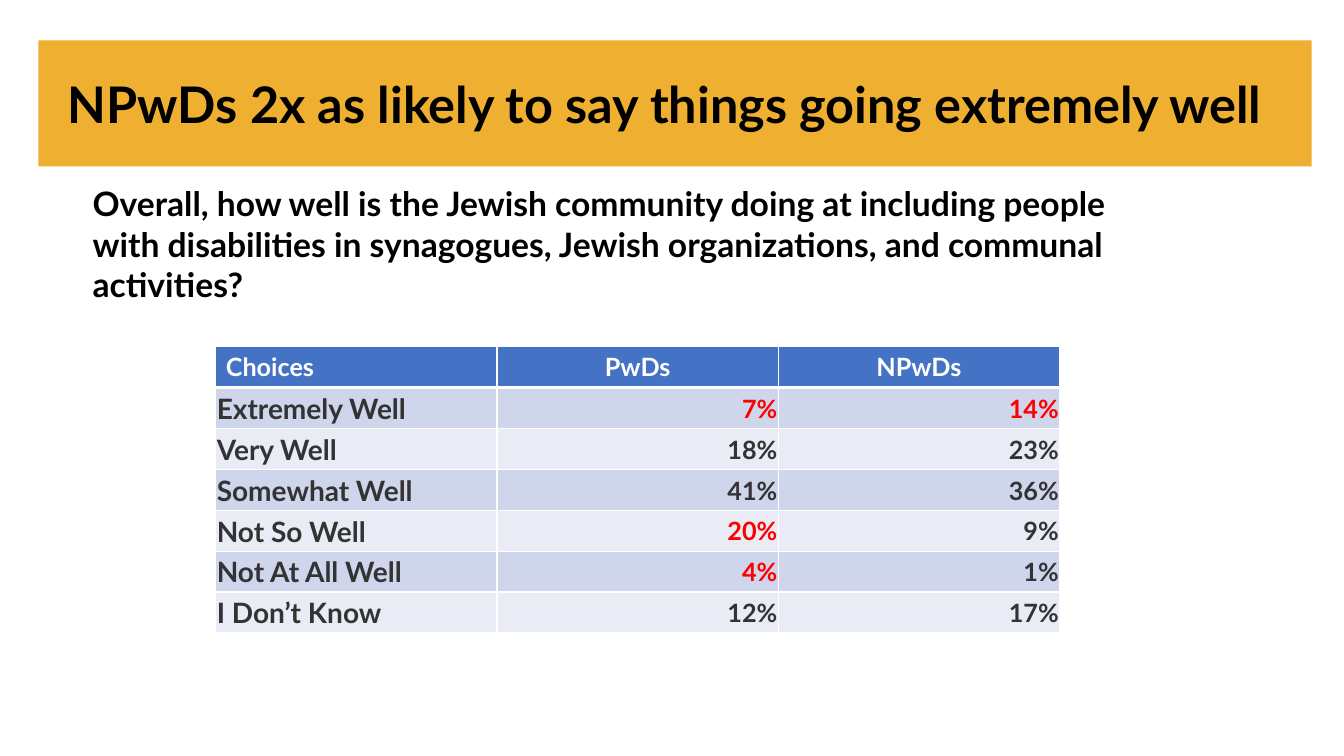
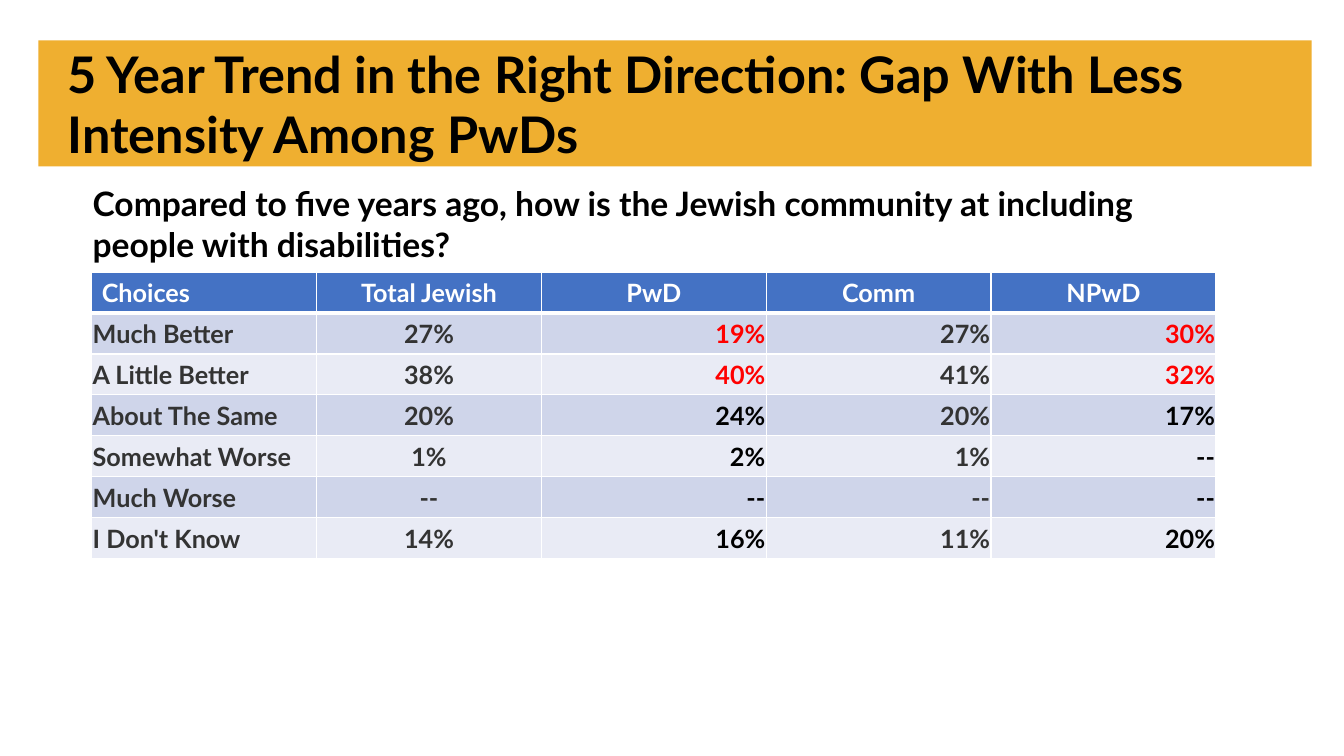
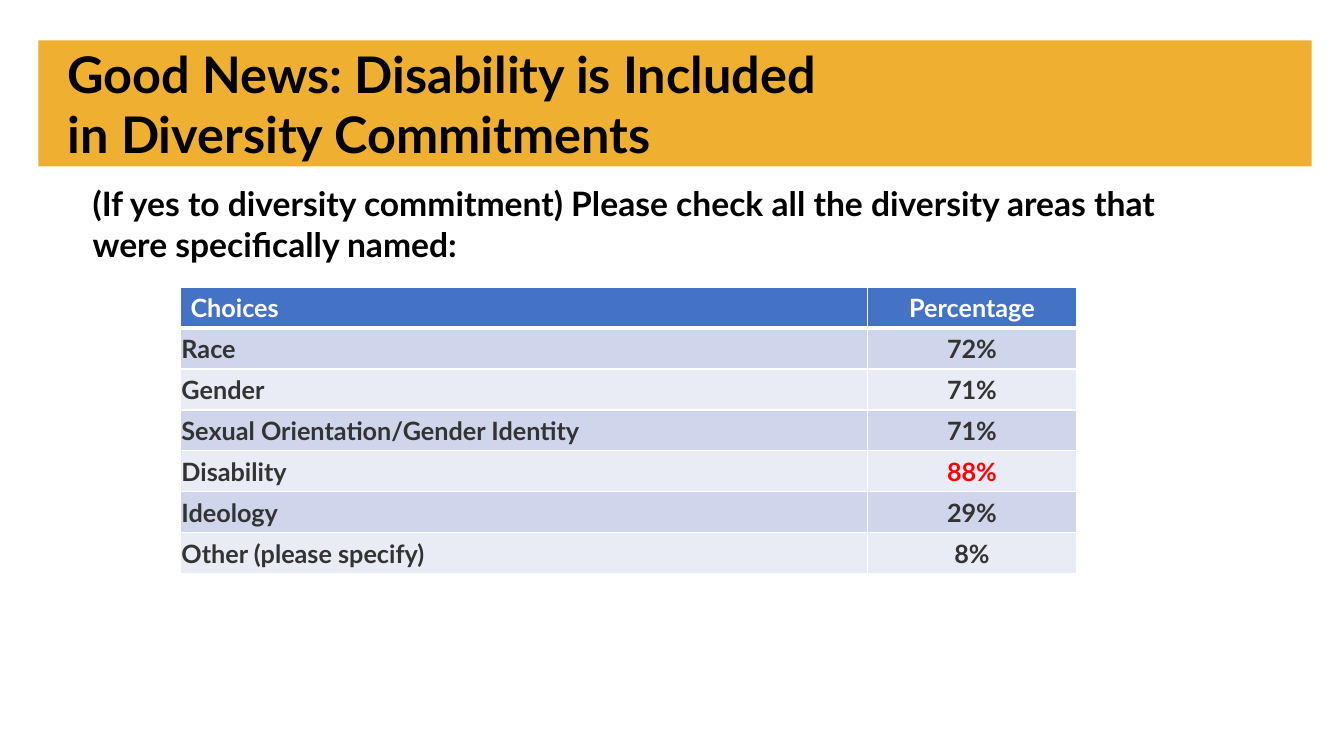
from pptx import Presentation
from pptx.dml.color import RGBColor
from pptx.enum.shapes import MSO_SHAPE
from pptx.enum.text import MSO_ANCHOR, MSO_AUTO_SIZE, PP_ALIGN
from pptx.oxml import parse_xml
from pptx.oxml.ns import nsdecls
from pptx.util import Inches, Pt

LEFT, CENTER, RIGHT = PP_ALIGN.LEFT, PP_ALIGN.CENTER, PP_ALIGN.RIGHT


def color(hex_code):
    """Turn a hex string into a colour."""
    return RGBColor.from_string(hex_code)


class SurveyDeck:
    """Holds the survey style and the slide being built."""

    FONT = "Lato"
    BAND, HEADER, STRIPES = "EFAF30", "4472C4", ("CFD5EA", "E9EBF5")
    WHITE, BLACK, GRAY, RED = "FFFFFF", "000000", "333333", "FF0000"
    THIN, THICK = 1, 3
    BAND_TOP, BAND_HEIGHT = Inches(0.4), Inches(1.25)

    def __init__(self):
        """Start a widescreen deck on the title-only layout."""
        self.deck = Presentation()
        self.deck.slide_width, self.deck.slide_height = Inches(13.33), Inches(7.5)
        self.layout = self.deck.slide_layouts[5]
        for footer in list(self.layout.placeholders)[1:]:
            self.layout.shapes.element.remove(footer.element)
        self.slide = None

    def add_slide(self, title, title_width, question, question_height):
        """Open a slide with its title and survey question."""
        self.slide = self.deck.slides.add_slide(self.layout)
        if len(self.deck.slides) == 1:
            self.add_layout_band()
        self.add_title(title, title_width)
        self.add_question(question, question_height)

    def add_layout_band(self):
        """Draw the title band and hand it to the shared layout."""
        band = self.slide.shapes.add_shape(
            MSO_SHAPE.RECTANGLE, Inches(0.38), self.BAND_TOP, Inches(12.63), self.BAND_HEIGHT)
        band.shadow.inherit = False
        band.fill.solid()
        band.fill.fore_color.rgb = color(self.BAND)
        band.line.fill.background()
        self.layout.shapes.element.insert(2, band.element)

    def set_text(self, frame, text, size, ink, align=LEFT):
        """Put bold text into a frame."""
        frame.text = text
        for paragraph in frame.paragraphs:
            paragraph.alignment = align
            for run in paragraph.runs:
                run.font.name = self.FONT
                run.font.size = Pt(size)
                run.font.bold = True
                run.font.color.rgb = color(ink)

    def add_title(self, text, width):
        """Place the title over the band."""
        title = self.slide.shapes.title
        title.left, title.top = Inches(0.57), self.BAND_TOP
        title.width, title.height = Inches(width), self.BAND_HEIGHT
        title.text_frame.auto_size = MSO_AUTO_SIZE.NONE
        title.text_frame.vertical_anchor = MSO_ANCHOR.MIDDLE
        self.set_text(title.text_frame, text, 36, self.BLACK)

    def add_question(self, text, height):
        """Place the survey question under the band."""
        question = self.slide.shapes.add_textbox(
            Inches(0.82), Inches(1.77), Inches(10.84), Inches(height))
        question.text_frame.word_wrap = True
        question.text_frame.auto_size = MSO_AUTO_SIZE.SHAPE_TO_FIT_TEXT
        self.set_text(question.text_frame, text, 24, self.BLACK)

    def style_cell(self, cell, fill, top, bottom):
        """Fill a cell and rule its four sides in white."""
        cell.vertical_anchor = MSO_ANCHOR.MIDDLE
        cell.fill.solid()
        cell.fill.fore_color.rgb = color(fill)
        properties = cell._tc.get_or_add_tcPr()
        sides = (("L", self.THIN), ("R", self.THIN), ("T", top), ("B", bottom))
        for place, (side, weight) in enumerate(sides):
            properties.insert(place, parse_xml(
                f'<a:ln{side} {nsdecls("a")} w="{Pt(weight)}"><a:solidFill>'
                f'<a:srgbClr val="{self.WHITE}"/></a:solidFill></a:ln{side}>'))

    def add_answers(self, left, top, columns, answers, highlights, choice_size=18):
        """Add the answer table; columns are (heading, width, align, ink)."""
        total_width = sum(width for _, width, _, _ in columns)
        table = self.slide.shapes.add_table(
            len(answers) + 1, len(columns), Inches(left), Inches(top),
            Inches(total_width), Inches(2.84)).table
        for col, (heading, width, align, ink) in enumerate(columns):
            table.columns[col].width = Inches(width)
            header = table.cell(0, col)
            self.style_cell(header, self.HEADER, self.THIN, self.THICK)
            self.set_text(header.text_frame, heading, 18, self.WHITE, CENTER if col else LEFT)
            for row, answer in enumerate(answers, 1):
                cell = table.cell(row, col)
                self.style_cell(cell, self.STRIPES[(row - 1) % 2],
                                self.THICK if row == 1 else self.THIN, self.THIN)
                cell.margin_left = cell.margin_right = cell.margin_top = Inches(0.01)
                cell.margin_bottom = 0
                self.set_text(cell.text_frame, answer[col], 18 if col else choice_size,
                              self.RED if (row, col) in highlights else ink, align)


def main():
    """Build the three survey slides."""
    survey = SurveyDeck()
    gray, black = survey.GRAY, survey.BLACK

    survey.add_slide(
        "NPwDs 2x as likely to say things going extremely well", 12.39,
        "Overall, how well is the Jewish community doing at including people with "
        "disabilities in synagogues, Jewish organizations, and communal activities?", 1.31)
    survey.add_answers(
        2.14, 3.44,
        [("Choices", 2.79, LEFT, gray), ("PwDs", 2.79, RIGHT, gray),
         ("NPwDs", 2.79, RIGHT, gray)],
        [("Extremely Well", "7%", "14%"),
         ("Very Well", "18%", "23%"),
         ("Somewhat Well", "41%", "36%"),
         ("Not So Well", "20%", "9%"),
         ("Not At All Well", "4%", "1%"),
         ("I Don’t Know", "12%", "17%")],
        {(1, 1), (1, 2), (4, 1), (5, 1)}, choice_size=20)

    survey.add_slide(
        "5 Year Trend in the Right Direction: Gap With Less Intensity Among PwDs", 11.5,
        "Compared to five years ago, how is the Jewish community at including "
        "people with disabilities?", 0.91)
    survey.add_answers(
        0.91, 2.7,
        [("Choices", 2.23, LEFT, gray), ("Total Jewish", 2.23, CENTER, gray),
         ("PwD", 2.23, RIGHT, black), ("Comm", 2.23, RIGHT, gray),
         ("NPwD", 2.23, RIGHT, black)],
        [("Much Better", "27%", "19%", "27%", "30%"),
         ("A Little Better", "38%", "40%", "41%", "32%"),
         ("About The Same", "20%", "24%", "20%", "17%"),
         ("Somewhat Worse", "1%", "2%", "1%", "--"),
         ("Much Worse", "--", "--", "--", "--"),
         ("I Don't Know", "14%", "16%", "11%", "20%")],
        {(1, 2), (1, 4), (2, 2), (2, 4)})

    survey.add_slide(
        "Good News: Disability is Included\vin Diversity Commitments", 11.62,
        "(If yes to diversity commitment) Please check all the diversity areas that "
        "were specifically named:", 0.91)
    survey.add_answers(
        1.79, 2.85,
        [("Choices", 6.81, LEFT, gray), ("Percentage", 2.08, CENTER, gray)],
        [("Race", "72%"),
         ("Gender", "71%"),
         ("Sexual Orientation/Gender Identity", "71%"),
         ("Disability", "88%"),
         ("Ideology", "29%"),
         ("Other (please specify)", "8%")],
        {(4, 1)})

    survey.deck.save("out.pptx")


if __name__ == "__main__":
    main()
